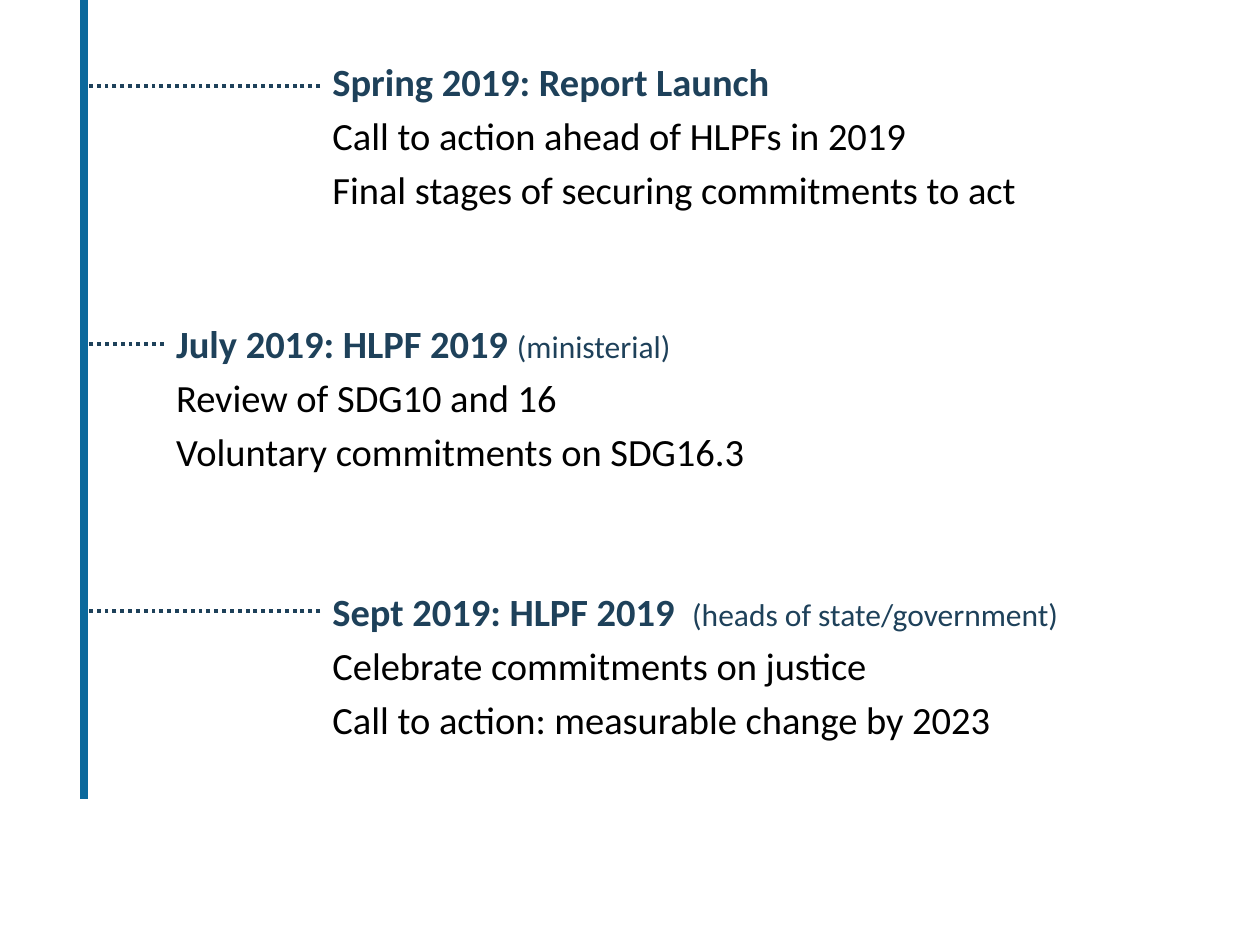
from lxml.etree import SubElement
from pptx import Presentation
from pptx.dml.color import RGBColor
from pptx.enum.dml import MSO_LINE_DASH_STYLE as Dash
from pptx.enum.shapes import MSO_CONNECTOR as Connector
from pptx.oxml.ns import qn
from pptx.util import Pt

NAVY, BLUE, BLACK = "1E415A", "0B699C", "000000"
AXIS_X, AXIS_BOTTOM = 48.2, 456.5
ENTRY_HEIGHT = 102.2

# left, top, width, leader y, heading, note, details
ENTRIES = [
    (182.9, 29.5, 433.4, 49, "Spring 2019: Report Launch", "",
     ["Call to action ahead of HLPFs in 2019",
      "Final stages of securing commitments to act"]),
    (93.6, 179.3, 362.9, 196.4, "July 2019: HLPF 2019 ", "(ministerial)",
     ["Review of SDG10 and 16", "Voluntary commitments on SDG16.3"]),
    (182.9, 332.6, 488.9, 349.2, "Sept 2019: HLPF 2019  ",
     "(heads of state/government)",
     ["Celebrate commitments on justice",
      "Call to action: measurable change by 2023"]),
]


def rgb(color):
    return RGBColor.from_string(color)


def add_line(slide, start, end, color, width, dash=None):
    line = slide.shapes.add_connector(
        Connector.STRAIGHT, *(Pt(value) for value in (*start, *end)))
    line.line.color.rgb = rgb(color)
    line.line.width = Pt(width)
    if dash:
        line.line.dash_style = dash
    SubElement(line._element.spPr, qn("a:effectLst"))


def format_paragraph(paragraph, color):
    paragraph.space_before = Pt(4.4)
    paragraph.font.name = "Calibri"
    paragraph.font.size = Pt(22)
    paragraph.font.color.rgb = rgb(color)


def add_entry(slide, left, top, width, leader_y, heading, note, details):
    """Place one dated entry and its dotted leader to the axis."""
    box = slide.shapes.add_textbox(
        Pt(left), Pt(top), Pt(width), Pt(ENTRY_HEIGHT))
    frame = box.text_frame
    frame.word_wrap = True

    title = frame.paragraphs[0]
    format_paragraph(title, NAVY)
    heading_run = title.add_run()
    heading_run.text = heading
    heading_run.font.bold = True
    if note:
        note_run = title.add_run()
        note_run.text = note
        note_run.font.size = Pt(18)

    for detail in details:
        paragraph = frame.add_paragraph()
        paragraph.text = detail
        format_paragraph(paragraph, BLACK)

    add_line(slide, (left, leader_y), (AXIS_X, leader_y),
             NAVY, 2.25, Dash.ROUND_DOT)


def main():
    presentation = Presentation()
    presentation.slide_width, presentation.slide_height = Pt(720), Pt(540)
    slide = presentation.slides.add_slide(presentation.slide_layouts[6])
    for entry in ENTRIES:
        add_entry(slide, *entry)
    add_line(slide, (AXIS_X, 0), (AXIS_X, AXIS_BOTTOM), BLUE, 4.5)
    presentation.save("out.pptx")


if __name__ == "__main__":
    main()
